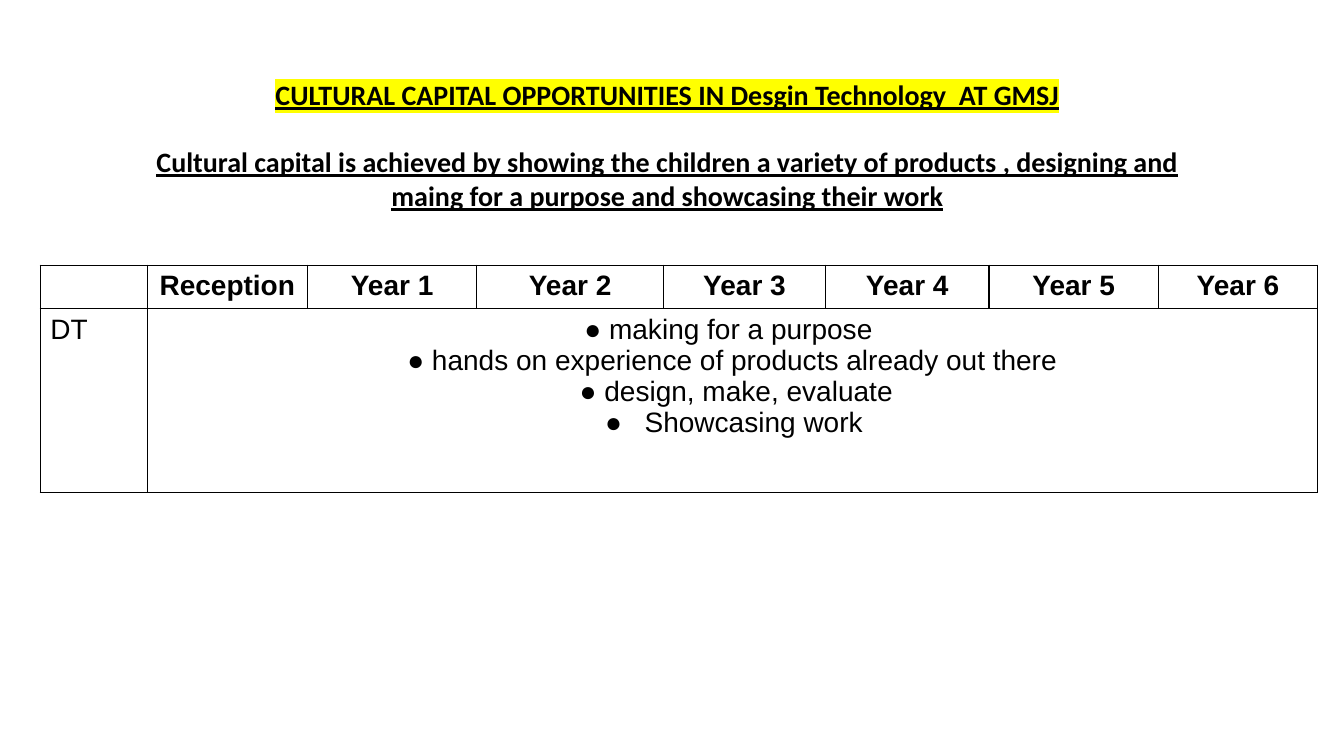
"""Build the cultural capital slide for Design Technology."""
from lxml import etree
from pptx import Presentation
from pptx import util as u
from pptx.dml.color import RGBColor
from pptx.enum import text
from pptx.oxml import ns

BLACK, YELLOW = "000000", "FFFF00"
HEADINGS = [
    "CULTURAL CAPITAL OPPORTUNITIES IN Desgin Technology  AT GMSJ",
    "Cultural capital is achieved by showing the children a variety of products , "
    "designing and maing for a purpose and showcasing their work",
]
HEADING_BOX = (1.28, 0.72, 10.68, 1.45)
YEARS = ["Reception"] + [f"Year {number}" for number in range(1, 7)]
SUBJECT = "DT"
OPPORTUNITIES = [
    "● making for a purpose ",
    "● hands on experience of products already out there",
    " ● design, make, evaluate",
]
BULLETED_OPPORTUNITY = "Showcasing work "
TABLE_LEFT, TABLE_TOP = 0.4, 2.63
COLUMN_WIDTHS = [1.06, 1.59, 1.68, 1.85, 1.61, 1.62, 1.68, 1.58]
ROW_HEIGHTS = [0.43, 1.82]


def add_xml(parent, tag, **attributes):
    return etree.SubElement(parent, ns.qn(tag), attributes)


def add_colour(parent, colour):
    add_xml(parent, "a:srgbClr", val=colour)


def style(paragraph, font_name, bold=False, underline=None, centred=True):
    paragraph.alignment = text.PP_ALIGN.CENTER if centred else text.PP_ALIGN.LEFT
    font = paragraph.font
    font.name, font.size = font_name, u.Pt(20)
    font.bold, font.underline = bold, underline
    font.color.rgb = RGBColor.from_string(BLACK)


def add_bullet(paragraph):
    properties = paragraph._p.get_or_add_pPr()
    properties.set("marL", str(u.Inches(0.5)))
    properties.set("indent", str(u.Inches(-0.39)))
    add_colour(add_xml(properties, "a:buClr"), BLACK)
    add_xml(properties, "a:buFont", typeface="Arial")
    add_xml(properties, "a:buChar", char="●")


def outline(cell):
    properties = cell._tc.get_or_add_tcPr()
    for side in ("a:lnL", "a:lnR", "a:lnT", "a:lnB"):
        line = add_xml(properties, side, w=str(u.Pt(1)))
        add_colour(add_xml(line, "a:solidFill"), BLACK)
    cell.fill.background()


def add_headings(slide):
    frame = slide.shapes.add_textbox(*map(u.Inches, HEADING_BOX)).text_frame
    frame.word_wrap = True
    frame.text = "\n".join(HEADINGS)
    title, summary = frame.paragraphs
    for paragraph in (title, summary):
        style(paragraph, "Calibri", bold=True, underline=True)
    summary.space_before = u.Pt(24)
    run_properties = title.runs[0]._r.get_or_add_rPr()
    add_colour(add_xml(run_properties, "a:highlight"), YELLOW)


def add_opportunities(slide):
    table = slide.shapes.add_table(
        len(ROW_HEIGHTS), len(COLUMN_WIDTHS), u.Inches(TABLE_LEFT), u.Inches(TABLE_TOP),
        u.Inches(sum(COLUMN_WIDTHS)), u.Inches(sum(ROW_HEIGHTS))).table
    table.first_row = table.horz_banding = False
    for column, width in zip(table.columns, COLUMN_WIDTHS):
        column.width = u.Inches(width)
    for row, height in zip(table.rows, ROW_HEIGHTS):
        row.height = u.Inches(height)
    for cell in table.iter_cells():
        outline(cell)
    for index, year in enumerate(YEARS, 1):
        cell = table.cell(0, index)
        cell.text = year
        style(cell.text_frame.paragraphs[0], "Arial", bold=True)
    subject = table.cell(1, 0)
    subject.text = SUBJECT
    style(subject.text_frame.paragraphs[0], "Arial", centred=False)
    details = table.cell(1, 1)
    details.merge(table.cell(1, len(YEARS)))
    details.text = "\n".join(OPPORTUNITIES + [BULLETED_OPPORTUNITY])
    add_bullet(details.text_frame.paragraphs[-1])
    for paragraph in details.text_frame.paragraphs:
        style(paragraph, "Arial")


def main():
    presentation = Presentation()
    presentation.slide_width, presentation.slide_height = u.Inches(13.33), u.Inches(7.5)
    slide = presentation.slides.add_slide(presentation.slide_layouts[6])
    add_headings(slide)
    add_opportunities(slide)
    presentation.save("out.pptx")


if __name__ == "__main__":
    main()
